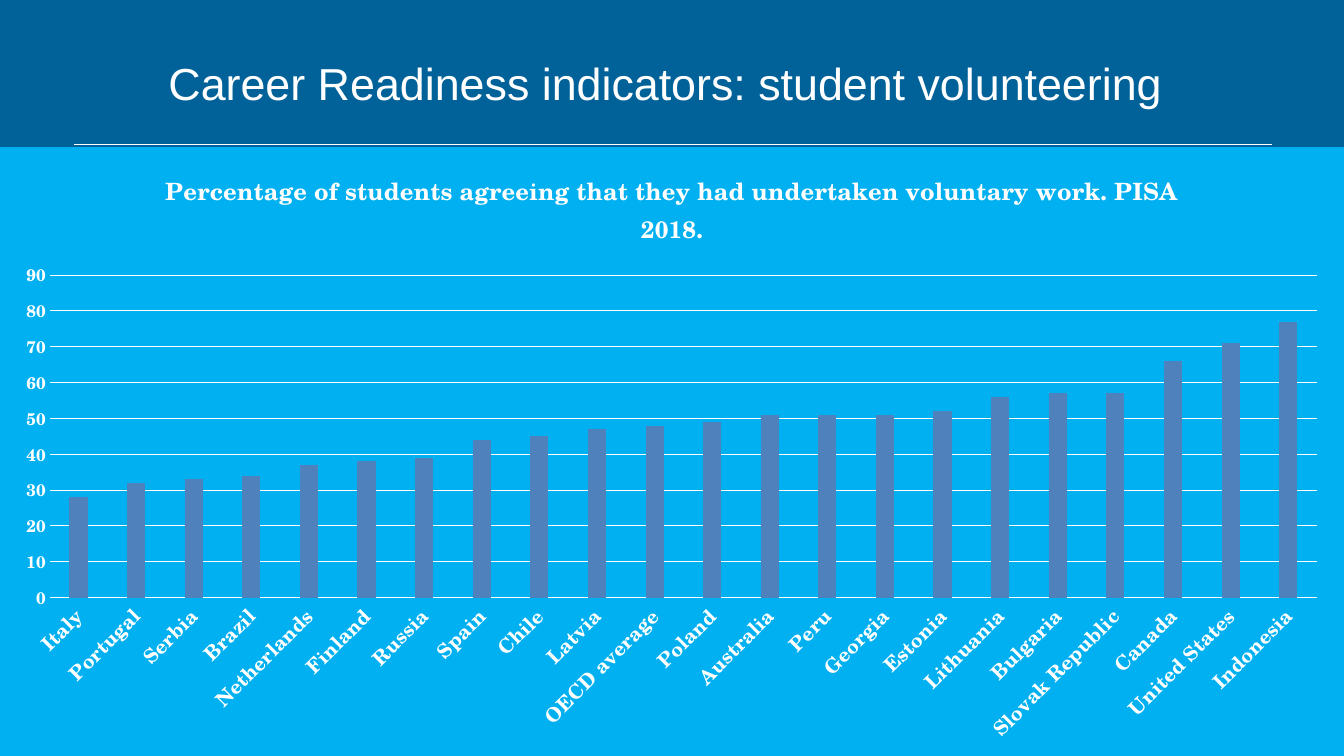
from lxml import etree
from pptx import Presentation
from pptx.chart.data import CategoryChartData
from pptx.dml.color import RGBColor
from pptx.enum.chart import XL_CHART_TYPE, XL_TICK_MARK
from pptx.enum.shapes import MSO_CONNECTOR
from pptx.enum.text import MSO_ANCHOR, MSO_AUTO_SIZE, PP_ALIGN
from pptx.oxml import parse_xml
from pptx.oxml.ns import nsdecls, qn
from pptx.util import Cm, Pt

COLUMNS = XL_CHART_TYPE.COLUMN_CLUSTERED
NO_TICK = XL_TICK_MARK.NONE
STRAIGHT = MSO_CONNECTOR.STRAIGHT
MIDDLE = MSO_ANCHOR.MIDDLE
NO_AUTOFIT = MSO_AUTO_SIZE.NONE
LEFT = PP_ALIGN.LEFT

WHITE = RGBColor(0xFF, 0xFF, 0xFF)
NAVY = RGBColor(0x00, 0x62, 0x99)
SKY = RGBColor(0x00, 0xB0, 0xF0)
BAR_BLUE = RGBColor(0x4F, 0x81, 0xBD)
TITLE_FONT = "Arial"
CHART_FONT = "TeX Gyre Schola"

WIDTH, HEIGHT = Cm(33.87), Cm(19.05)
HEADER_HEIGHT = Cm(3.71)

VOLUNTEERING = {
    "Italy": 28, "Portugal": 32, "Serbia": 33, "Brazil": 34,
    "Netherlands": 37, "Finland": 38, "Russia": 39, "Spain": 44,
    "Chile": 45, "Latvia": 47, "OECD average": 48, "Poland": 49,
    "Australia": 51, "Peru": 51, "Georgia": 51, "Estonia": 52,
    "Lithuania": 56, "Bulgaria": 57, "Slovak Republic": 57,
    "Canada": 66, "United States": 71, "Indonesia": 77,
}


def style_font(font, size, name=CHART_FONT, bold=True):
    font.size = Pt(size)
    font.name = name
    font.bold = bold
    font.color.rgb = WHITE


def style_line(line, width):
    line.color.rgb = WHITE
    line.width = Pt(width)


def add_header(s, left, top, width, height):
    """Place the title and the rule beneath it."""
    rule_left, rule_top = left + Cm(1.86), top + height - Cm(0.07)
    rule = s.shapes.add_connector(
        STRAIGHT, rule_left, rule_top, left + width - Cm(1.81), rule_top)
    style_line(rule.line, 0.5)
    etree.SubElement(rule._element.spPr, qn("a:effectLst"))

    title = s.shapes.title
    title.left, title.top = left + Cm(3.99), top + Cm(0.66)
    title.width, title.height = Cm(27.46), Cm(2.84)
    tf = title.text_frame
    tf.text = "Career Readiness indicators: student volunteering"
    tf.auto_size = NO_AUTOFIT
    tf.vertical_anchor = MIDDLE
    p = tf.paragraphs[0]
    p.alignment = LEFT
    style_font(p.runs[0].font, 32, TITLE_FONT, False)


def fill_chart_area(chart, color):
    area = parse_xml(
        f'<c:spPr {nsdecls("c", "a")}><a:solidFill><a:srgbClr val="{color}"/>'
        '</a:solidFill><a:ln><a:noFill/></a:ln></c:spPr>')
    chart._chartSpace.find(qn("c:chart")).addnext(area)


def set_plot_layout(chart, x, y, w, h):
    """Fix the inner plot area, in fractions of the chart."""
    plot_area = chart._chartSpace.find(qn("c:chart")).find(qn("c:plotArea"))
    for old in plot_area.findall(qn("c:layout")):
        plot_area.remove(old)
    plot_area.insert(0, parse_xml(
        f'<c:layout {nsdecls("c")}><c:manualLayout>'
        '<c:layoutTarget val="inner"/><c:xMode val="edge"/><c:yMode val="edge"/>'
        f'<c:x val="{x}"/><c:y val="{y}"/><c:w val="{w}"/><c:h val="{h}"/>'
        '</c:manualLayout></c:layout>'))


def style_axes(chart):
    cat_axis, val_axis = chart.category_axis, chart.value_axis
    for axis, size in ((cat_axis, 14), (val_axis, 12)):
        axis.major_tick_mark = axis.minor_tick_mark = NO_TICK
        style_font(axis.tick_labels.font, size)
    style_line(cat_axis.format.line, 0.75)
    labels = cat_axis._element.find(qn("c:txPr")).find(qn("a:bodyPr"))
    labels.set("rot", "-2700000")
    labels.set("vert", "horz")

    val_axis.minimum_scale, val_axis.maximum_scale = 0, 90
    val_axis.major_unit = 10
    val_axis.format.line.fill.background()
    style_line(val_axis.major_gridlines.format.line, 0.75)


def add_volunteering_chart(s, left, top, width, height):
    data = CategoryChartData()
    data.categories = list(VOLUNTEERING)
    data.add_series("Series 1", list(VOLUNTEERING.values()))
    chart = s.shapes.add_chart(COLUMNS, left, top, width, height, data).chart
    style_font(chart.font, 12)
    chart.has_legend = False
    fill_chart_area(chart, SKY)
    set_plot_layout(chart, 0.037, 0.21, 0.943, 0.53)

    tf = chart.chart_title.text_frame
    tf.text = ("Percentage of students agreeing that they had undertaken "
               "voluntary work. PISA 2018.")
    style_font(tf.paragraphs[0].runs[0].font, 17)
    chart.chart_title.include_in_layout = False

    plot = chart.plots[0]
    plot.vary_by_categories = False
    plot.gap_width, plot.overlap = 219, -27
    fill = plot.series[0].format.fill
    fill.solid()
    fill.fore_color.rgb = BAR_BLUE
    style_axes(chart)


def main():
    prs = Presentation()
    prs.slide_width, prs.slide_height = WIDTH, HEIGHT
    s = prs.slides.add_slide(prs.slide_layouts[5])
    s.background.fill.solid()
    s.background.fill.fore_color.rgb = NAVY
    add_header(s, 0, 0, WIDTH, HEADER_HEIGHT)
    add_volunteering_chart(s, 0, HEADER_HEIGHT, WIDTH, HEIGHT - HEADER_HEIGHT)
    prs.save("out.pptx")


if __name__ == "__main__":
    main()
